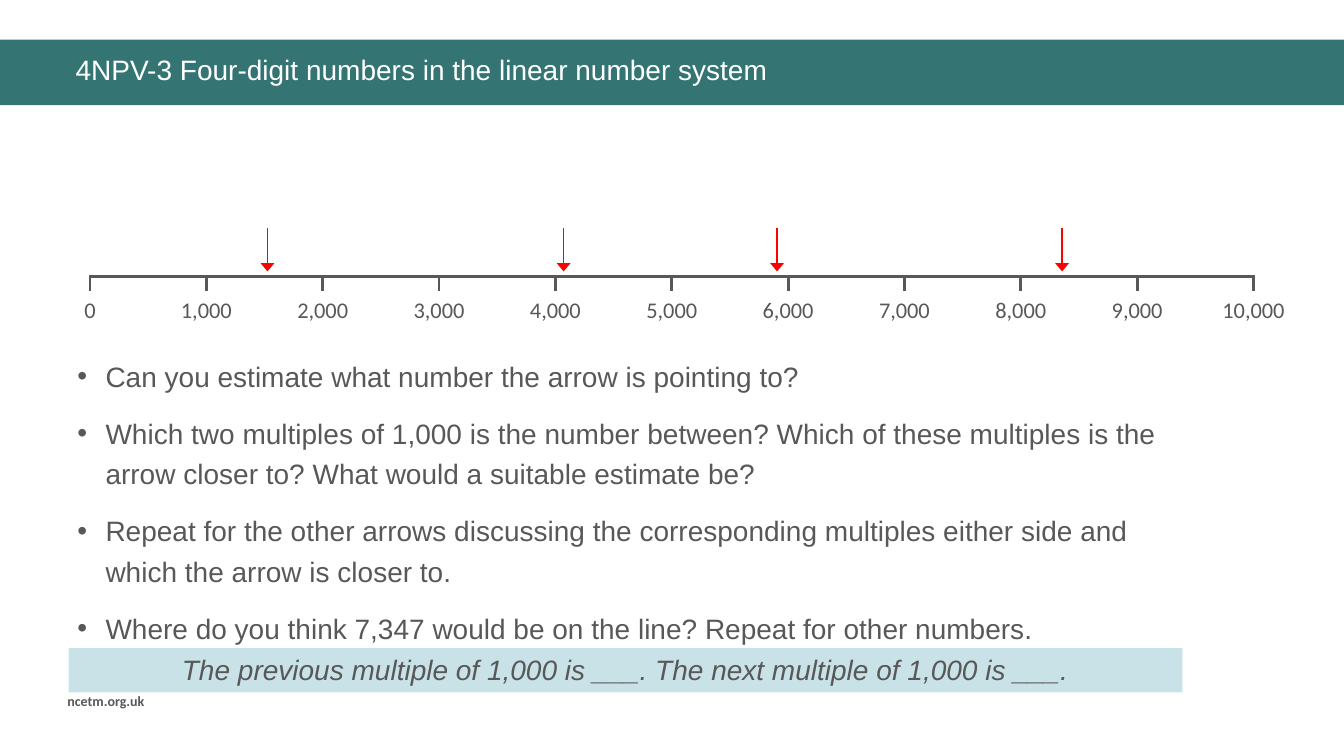
from dataclasses import dataclass

from lxml import etree
from pptx import Presentation
from pptx.dml.color import RGBColor
from pptx.enum.shapes import MSO_CONNECTOR, MSO_SHAPE
from pptx.enum.text import MSO_ANCHOR as Anchor, MSO_AUTO_SIZE as AutoSize, PP_ALIGN as Align
from pptx.oxml.ns import qn
from pptx.util import Cm, Pt

GREY, TEAL, PALE_BLUE, WHITE, RED = "585858", "347574", "C8E2E8", "FFFFFF", "FF0000"
LINE_START, LINE_END, LINE_MAX = 2.27, 31.59, 10000
LABEL_WIDTH = 3.07
ARROW_VALUES = (1525, 4070, 5905, 8355)
QUESTIONS = (
    "Can you estimate what number the arrow is pointing to?",
    "Which two multiples of 1,000 is the number between? Which of these multiples is the "
    "arrow closer to? What would a suitable estimate be?",
    "Repeat for the other arrows discussing the corresponding multiples either side and "
    "which the arrow is closer to.",
    "Where do you think 7,347 would be on the line? Repeat for other numbers.",
)


@dataclass(frozen=True)
class Box:
    left: float
    top: float
    width: float
    height: float

    def lengths(self) -> tuple:
        return Cm(self.left), Cm(self.top), Cm(self.width), Cm(self.height)


@dataclass(frozen=True)
class TextStyle:
    size: float
    color: str = GREY
    font: str = "Arial"
    bold: bool = False
    italic: bool = False
    align: Align = Align.LEFT


@dataclass(frozen=True)
class Stroke:
    x1: float
    y1: float
    x2: float
    y2: float
    weight: float
    color: str = GREY
    arrow: bool = False


LABEL = TextStyle(16, font="Calibri", align=Align.CENTER)


def rgb(code: str) -> RGBColor:
    return RGBColor.from_string(code)


def position(value: int) -> float:
    return LINE_START + (LINE_END - LINE_START) * value / LINE_MAX


def format_paragraph(paragraph, style: TextStyle) -> None:
    paragraph.alignment = style.align
    for run in paragraph.runs:
        run.font.size = Pt(style.size)
        run.font.name = style.font
        run.font.bold = style.bold
        run.font.italic = style.italic
        run.font.color.rgb = rgb(style.color)


def write(shape, text: str, style: TextStyle) -> None:
    frame = shape.text_frame
    frame.text = text
    frame.word_wrap = True
    frame.auto_size = AutoSize.NONE
    frame.vertical_anchor = Anchor.TOP
    for paragraph in frame.paragraphs:
        format_paragraph(paragraph, style)


def add_text(slide, box: Box, text: str, style: TextStyle):
    textbox = slide.shapes.add_textbox(*box.lengths())
    write(textbox, text, style)
    return textbox


def add_panel(slide, box: Box, fill: str):
    panel = slide.shapes.add_shape(MSO_SHAPE.RECTANGLE, *box.lengths())
    panel.shadow.inherit = False
    panel.fill.solid()
    panel.fill.fore_color.rgb = rgb(fill)
    panel.line.fill.background()
    return panel


def add_stroke(slide, stroke: Stroke) -> None:
    connector = slide.shapes.add_connector(
        MSO_CONNECTOR.STRAIGHT, Cm(stroke.x1), Cm(stroke.y1), Cm(stroke.x2), Cm(stroke.y2)
    )
    connector.line.color.rgb = rgb(stroke.color)
    connector.line.width = Pt(stroke.weight)
    properties = connector._element.spPr
    if stroke.arrow:
        etree.SubElement(properties.find(qn("a:ln")), qn("a:tailEnd"), type="triangle", w="lg")
    etree.SubElement(properties, qn("a:effectLst"))


def add_bullet(paragraph) -> None:
    properties = paragraph._p.get_or_add_pPr()
    properties.set("marL", str(Cm(0.71)))
    properties.set("indent", str(Cm(-0.71)))
    color = etree.SubElement(properties, qn("a:buClr"))
    etree.SubElement(color, qn("a:srgbClr"), val=GREY)
    etree.SubElement(properties, qn("a:buFont"), typeface="Arial")
    etree.SubElement(properties, qn("a:buChar"), char="•")


def add_header(slide) -> None:
    band = add_panel(slide, Box(0, 1, 33.87, 1.65), TEAL)
    title = slide.shapes.title
    title._element.addprevious(band._element)
    title.left, title.top, title.width, title.height = Box(1.65, 1.3, 31.29, 1.19).lengths()
    write(title, "4NPV-3 Four-digit numbers in the linear number system", TextStyle(20, WHITE))
    title.text_frame.paragraphs[0].line_spacing = 0.9


def add_number_line(slide) -> None:
    add_stroke(slide, Stroke(LINE_START - 0.02, 6.96, LINE_END + 0.02, 6.96, 2.25))
    for value in range(0, LINE_MAX + 1, 1000):
        x = position(value)
        add_stroke(slide, Stroke(x, 6.94, x, 7.34, 2))
        add_text(slide, Box(x - LABEL_WIDTH / 2, 7.34, LABEL_WIDTH, 0.94), f"{value:,}", LABEL)
    for value in ARROW_VALUES:
        x = position(value)
        add_stroke(slide, Stroke(x, 5.74, x, 6.84, 1, RED, arrow=True))


def add_questions(slide) -> None:
    questions = add_text(slide, Box(1.7, 8.76, 28.5, 6.25), "\n".join(QUESTIONS), TextStyle(20))
    for index, paragraph in enumerate(questions.text_frame.paragraphs):
        add_bullet(paragraph)
        paragraph.line_spacing = 1.2
        paragraph.space_before = Pt(6 if index else 0)
        paragraph.space_after = Pt(6)


def main() -> None:
    deck = Presentation()
    deck.slide_width, deck.slide_height = Cm(33.87), Cm(19.05)
    slide = deck.slides.add_slide(deck.slide_layouts.get_by_name("Title Only"))
    add_header(slide)
    add_text(slide, Box(1.45, 17.32, 3.07, 0.69), "ncetm.org.uk",
             TextStyle(10, font="Calibri", bold=True))
    add_number_line(slide)
    add_questions(slide)
    sentence = add_panel(slide, Box(1.73, 16.33, 28.07, 1.12), PALE_BLUE)
    write(sentence, "The previous multiple of 1,000 is ___. The next multiple of 1,000 is ___.",
          TextStyle(20, italic=True, align=Align.CENTER))
    deck.save("out.pptx")


if __name__ == "__main__":
    main()
